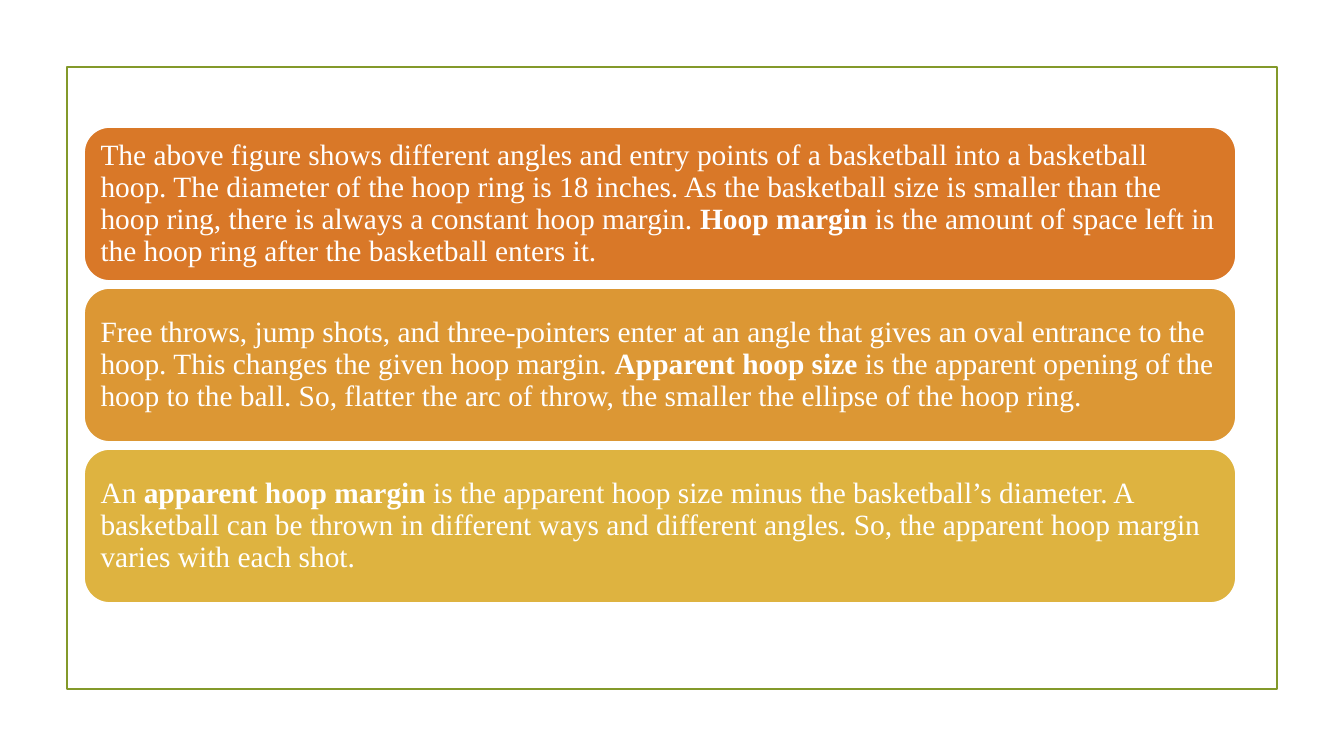
import dataclasses

import pptx
import pptx.dml.color
import pptx.enum.shapes
import pptx.enum.text
import pptx.util


@dataclasses.dataclass(frozen=True)
class Theme:
    frame: str = "83992A"
    white: str = "FFFFFF"
    cards: tuple = ("D97828", "DC9734", "DEB340")
    font: str = "Times New Roman"
    body_size: int = 21
    line_width: float = 1.25
    line_spacing: float = 0.9


def px(length):
    return pptx.util.Emu(round(length * 914400 / 100.8))


def rgb(value):
    return pptx.dml.color.RGBColor.from_string(value)


class SlideBuilder:
    """Draws framed, rounded text cards on one slide in one theme."""

    def __init__(self, slide, theme):
        self.slide = slide
        self.theme = theme

    def outlined(self, preset, left, top, width, height, line):
        shape = self.slide.shapes.add_shape(
            preset, px(left), px(top), px(width), px(height))
        shape.shadow.inherit = False
        shape.line.color.rgb = rgb(line)
        shape.line.width = pptx.util.Pt(self.theme.line_width)
        return shape

    def frame(self, left, top, width, height):
        border = self.outlined(pptx.enum.shapes.MSO_SHAPE.RECTANGLE,
                               left, top, width, height, self.theme.frame)
        border.fill.background()

    def card(self, left, top, width, height, color, passages, inset=9):
        card = self.outlined(pptx.enum.shapes.MSO_SHAPE.ROUNDED_RECTANGLE,
                             left, top, width, height, self.theme.white)
        card.fill.solid()
        card.fill.fore_color.rgb = rgb(color)
        body = card.text_frame
        body.word_wrap = True
        body.vertical_anchor = pptx.enum.text.MSO_ANCHOR.MIDDLE
        body.margin_left = body.margin_right = px(inset)
        body.margin_top = body.margin_bottom = px(inset)
        statement = body.paragraphs[0]
        statement.alignment = pptx.enum.text.PP_ALIGN.LEFT
        statement.line_spacing = self.theme.line_spacing
        for words, bold in passages:
            passage = statement.add_run()
            passage.text = words
            passage.font.name = self.theme.font
            passage.font.size = pptx.util.Pt(self.theme.body_size)
            passage.font.bold = bold
            passage.font.color.rgb = rgb(self.theme.white)


DEFINITIONS = (
    (("The above figure shows different angles and entry points of a "
      "basketball into a basketball hoop. The diameter of the hoop ring is "
      "18 inches. As the basketball size is smaller than the hoop ring, "
      "there is always a constant hoop margin. ", False),
     ("Hoop margin", True),
     (" is the amount of space left in the hoop ring after the basketball "
      "enters it.", False)),
    (("Free throws, jump shots, and three-pointers enter at an angle that "
      "gives an oval entrance to the hoop. This changes the given hoop "
      "margin. ", False),
     ("Apparent hoop size", True),
     (" is the apparent opening of the hoop to the ball. So, flatter the "
      "arc of throw, the smaller the ellipse of the hoop ring.", False)),
    (("An ", False),
     ("apparent hoop margin", True),
     (" is the apparent hoop size minus the basketball’s diameter. A "
      "basketball can be thrown in different ways and different angles. So, "
      "the apparent hoop margin varies with each shot.", False)),
)
CARD_TOP, CARD_PITCH = 127, 161


def main():
    deck = pptx.Presentation()
    deck.slide_width, deck.slide_height = px(1344), px(756)
    theme = Theme()
    builder = SlideBuilder(deck.slides.add_slide(deck.slide_layouts[6]), theme)
    builder.frame(67, 67, 1210, 622)
    for row, (color, passages) in enumerate(zip(theme.cards, DEFINITIONS)):
        builder.card(84, CARD_TOP + row * CARD_PITCH, 1152, 154, color, passages)
    deck.save("out.pptx")


if __name__ == "__main__":
    main()
